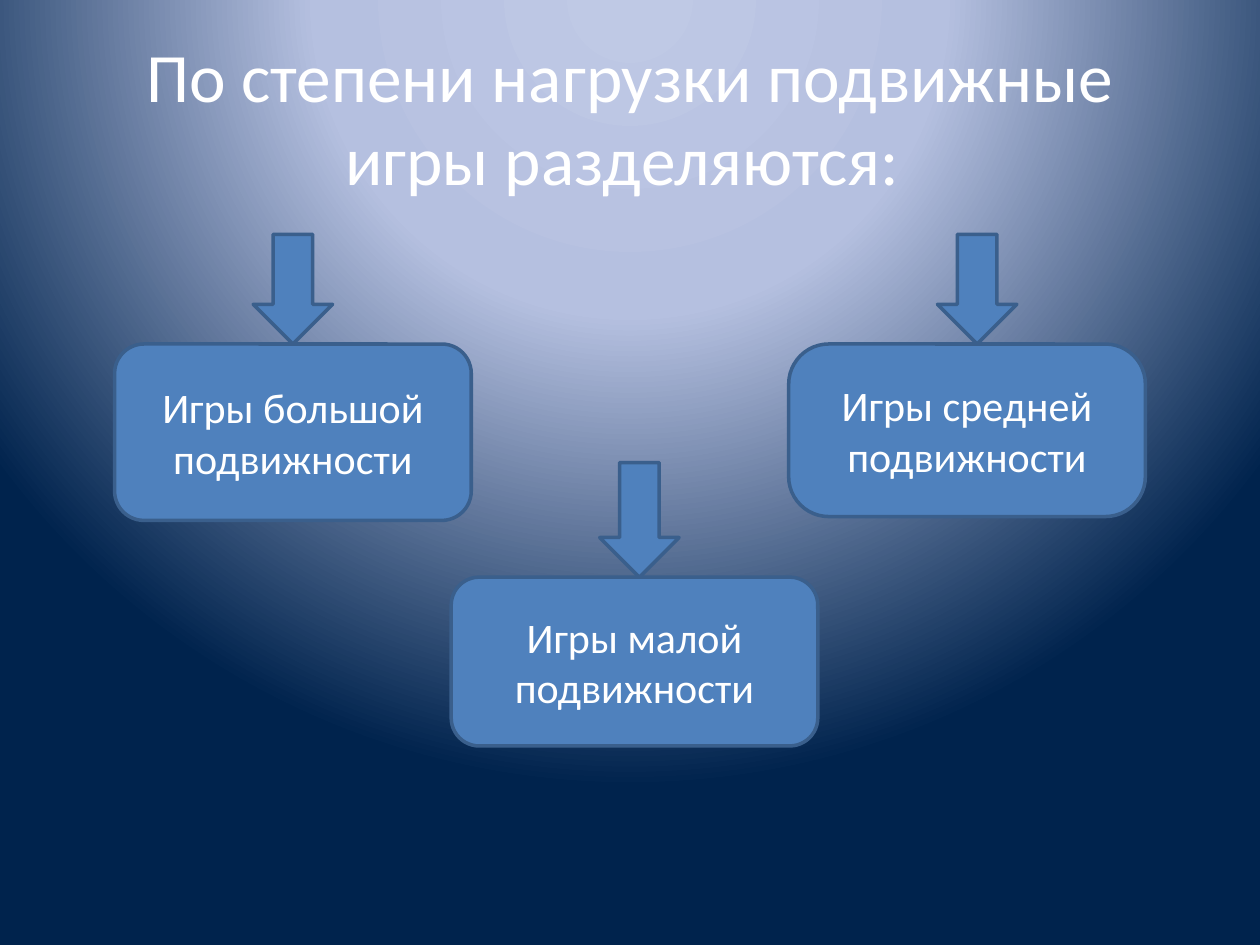
"""Build a slide that sorts active games into three load levels."""
from dataclasses import dataclass

import lxml.etree
import pptx
import pptx.dml.color
import pptx.enum.shapes
import pptx.enum.text
import pptx.oxml
import pptx.oxml.ns
import pptx.util

Pt = pptx.util.Pt
ShapeKind = pptx.enum.shapes.MSO_SHAPE


@dataclass(frozen=True)
class Theme:
    font: str = "Calibri"
    title_size: float = 39.6
    box_size: float = 24
    text: str = "FFFFFF"
    fill: str = "4F81BD"
    line: str = "3A5F8C"
    line_width: float = 2
    background: tuple = ((0, "BFC9E5"), (40, "B5C0E0"), (100, "00234D"))


@dataclass(frozen=True)
class GameLevel:
    text: str
    left: float
    top: float
    width: float
    height: float
    arrow_center: float
    arrow_height: float
    corner: float = 0.1667


THEME = Theme()
ARROW_WIDTH = 45.36
TITLE = "По степени нагрузки подвижные игры разделяются: "
LEVELS = (
    GameLevel("Игры средней подвижности", 450.7, 196.6, 203.8, 98.6, 558.4, 62.6, 0.232),
    GameLevel("Игры большой подвижности", 65.5, 196.6, 203.8, 100.8, 167.4, 62.6),
    GameLevel("Игры малой подвижности", 257.8, 329.8, 209.5, 96.5, 365.4, 65.5),
)


def color(value: str) -> pptx.dml.color.RGBColor:
    """Turn a hex value into a colour."""
    return pptx.dml.color.RGBColor.from_string(value)


def paint_background(slide) -> None:
    """Fill the background with a circular gradient centred above the slide."""
    fill = slide.background.fill
    fill.gradient()
    gradient = slide.background._cSld.find(".//" + pptx.oxml.ns.qn("a:gradFill"))
    stops = "".join(
        f'<a:gs pos="{position * 1000}"><a:srgbClr val="{value}"/></a:gs>'
        for position, value in THEME.background
    )
    replacement = pptx.oxml.parse_xml(
        f'<a:gradFill {pptx.oxml.ns.nsdecls("a")} rotWithShape="1"><a:gsLst>{stops}</a:gsLst>'
        '<a:path path="circle"><a:fillToRect l="50000" t="-80000" r="50000" b="180000"/>'
        "</a:path></a:gradFill>"
    )
    gradient.getparent().replace(gradient, replacement)


def write_text(shape, text: str, size: float) -> None:
    """Write one centred run in the middle of a shape."""
    frame = shape.text_frame
    frame.word_wrap = True
    frame.vertical_anchor = pptx.enum.text.MSO_ANCHOR.MIDDLE
    paragraph = frame.paragraphs[0]
    paragraph.alignment = pptx.enum.text.PP_ALIGN.CENTER
    run = paragraph.add_run()
    run.text = text
    run.font.name = THEME.font
    run.font.size = Pt(size)
    run.font.color.rgb = color(THEME.text)


def add_block(slide, kind, left: float, top: float, width: float, height: float):
    """Add a filled and outlined preset shape."""
    shape = slide.shapes.add_shape(kind, Pt(left), Pt(top), Pt(width), Pt(height))
    shape.shadow.inherit = False
    shape.fill.solid()
    shape.fill.fore_color.rgb = color(THEME.fill)
    shape.line.color.rgb = color(THEME.line)
    shape.line.width = Pt(THEME.line_width)
    return shape


def add_level_box(slide, level: GameLevel) -> None:
    """Add the rounded box of a level."""
    box = add_block(
        slide, ShapeKind.ROUNDED_RECTANGLE, level.left, level.top, level.width, level.height
    )
    box.adjustments[0] = level.corner
    write_text(box, level.text, THEME.box_size)


def add_level_arrow(slide, level: GameLevel) -> None:
    """Add the arrow that points down to the box of a level."""
    add_block(
        slide,
        ShapeKind.DOWN_ARROW,
        level.arrow_center - ARROW_WIDTH / 2,
        level.top - level.arrow_height,
        ARROW_WIDTH,
        level.arrow_height,
    )


def main() -> None:
    """Build and save the presentation."""
    presentation = pptx.Presentation()
    presentation.slide_width, presentation.slide_height = Pt(720), Pt(540)
    slide = presentation.slides.add_slide(presentation.slide_layouts[5])
    paint_background(slide)
    title = slide.shapes.title
    title.left, title.top, title.width, title.height = Pt(36), Pt(21.6), Pt(648), Pt(90)
    write_text(title, TITLE, THEME.title_size)
    for level in LEVELS:
        add_level_box(slide, level)
    for level in LEVELS:
        add_level_arrow(slide, level)
    presentation.save("out.pptx")


if __name__ == "__main__":
    main()
